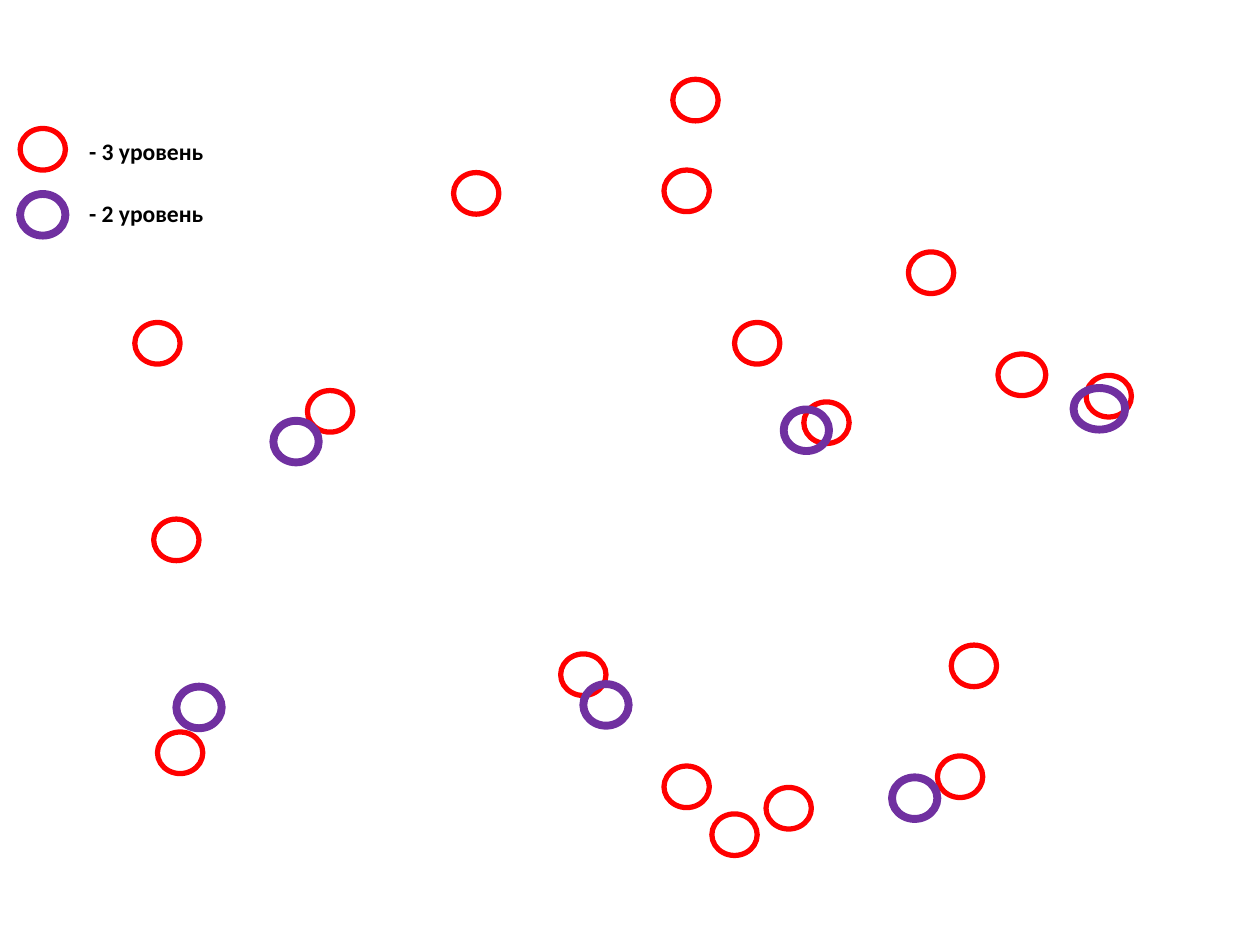
from dataclasses import dataclass

from pptx import Presentation
from pptx.dml.color import RGBColor
from pptx.enum.shapes import MSO_SHAPE
from pptx.enum.text import MSO_AUTO_SIZE as AutoSize
from pptx.util import Inches, Pt


@dataclass(frozen=True)
class Theme:
    level_3: RGBColor = RGBColor(0xFF, 0x00, 0x00)
    level_2: RGBColor = RGBColor(0x70, 0x30, 0xA0)
    text: RGBColor = RGBColor(0x00, 0x00, 0x00)
    font: str = "Calibri"
    legend_size: float = 13.5
    level_3_line: float = 3
    level_2_line: float = 4.5


theme = Theme()
presentation = Presentation()
presentation.slide_width = Inches(10)
presentation.slide_height = Inches(7.5)
slide = presentation.slides.add_slide(presentation.slide_layouts[6])

# Grid of 100 columns by 75 rows
COLUMN = presentation.slide_width / 100
ROW = presentation.slide_height / 75
RING_WIDTH, RING_HEIGHT = 3.6, 3.3
LEGEND_LEFT, LABEL_LEFT, LABEL_WIDTH = 1.6, 6.1, 15.8


def grid_box(left, top, width, height):
    return (round(left * COLUMN), round(top * ROW),
            round(width * COLUMN), round(height * ROW))


def add_ring(left, top, color, line_width, width=RING_WIDTH):
    ring = slide.shapes.add_shape(
        MSO_SHAPE.OVAL, *grid_box(left, top, width, RING_HEIGHT))
    ring.shadow.inherit = False
    ring.fill.background()
    ring.line.color.rgb = color
    ring.line.width = Pt(line_width)


# Ring positions: column, row and, where wider than usual, width
level_3_rings = [
    (63.8, 31.9), (86.2, 29.8), (10.7, 25.6), (52.7, 60.8), (44.5, 51.9),
    (56.5, 64.6), (24.4, 31), (74.4, 60), (53.4, 6.3), (36, 13.7),
    (75.5, 51.2), (52.7, 13.5), (12.5, 58.1), (12.2, 41.2), (72.1, 20),
    (58.3, 25.6), (79.2, 28.1, 3.8), (60.8, 62.5),
]
level_2_rings = [
    (70.8, 61.7), (21.7, 33.4), (62.2, 32.5), (85.2, 30.8, 4.1),
    (46.3, 54.3), (14, 54.5),
]

# Label, ring row in the legend, label row, colour, line width, rings
levels = [
    ("- 3 уровень", 10.2, 10.4, theme.level_3, theme.level_3_line, level_3_rings),
    ("- 2 уровень", 15.4, 15.3, theme.level_2, theme.level_2_line, level_2_rings),
]

for label, ring_top, label_top, color, line_width, rings in levels:
    for left, top, *width in rings:
        add_ring(left, top, color, line_width, *width)

    add_ring(LEGEND_LEFT, ring_top, color, line_width)
    text_box = slide.shapes.add_textbox(
        *grid_box(LABEL_LEFT, label_top, LABEL_WIDTH, RING_HEIGHT))
    text_box.text_frame.word_wrap = True
    text_box.text_frame.auto_size = AutoSize.SHAPE_TO_FIT_TEXT
    run = text_box.text_frame.paragraphs[0].add_run()
    run.text = label
    run.font.name = theme.font
    run.font.size = Pt(theme.legend_size)
    run.font.bold = True
    run.font.color.rgb = theme.text

presentation.save("out.pptx")
